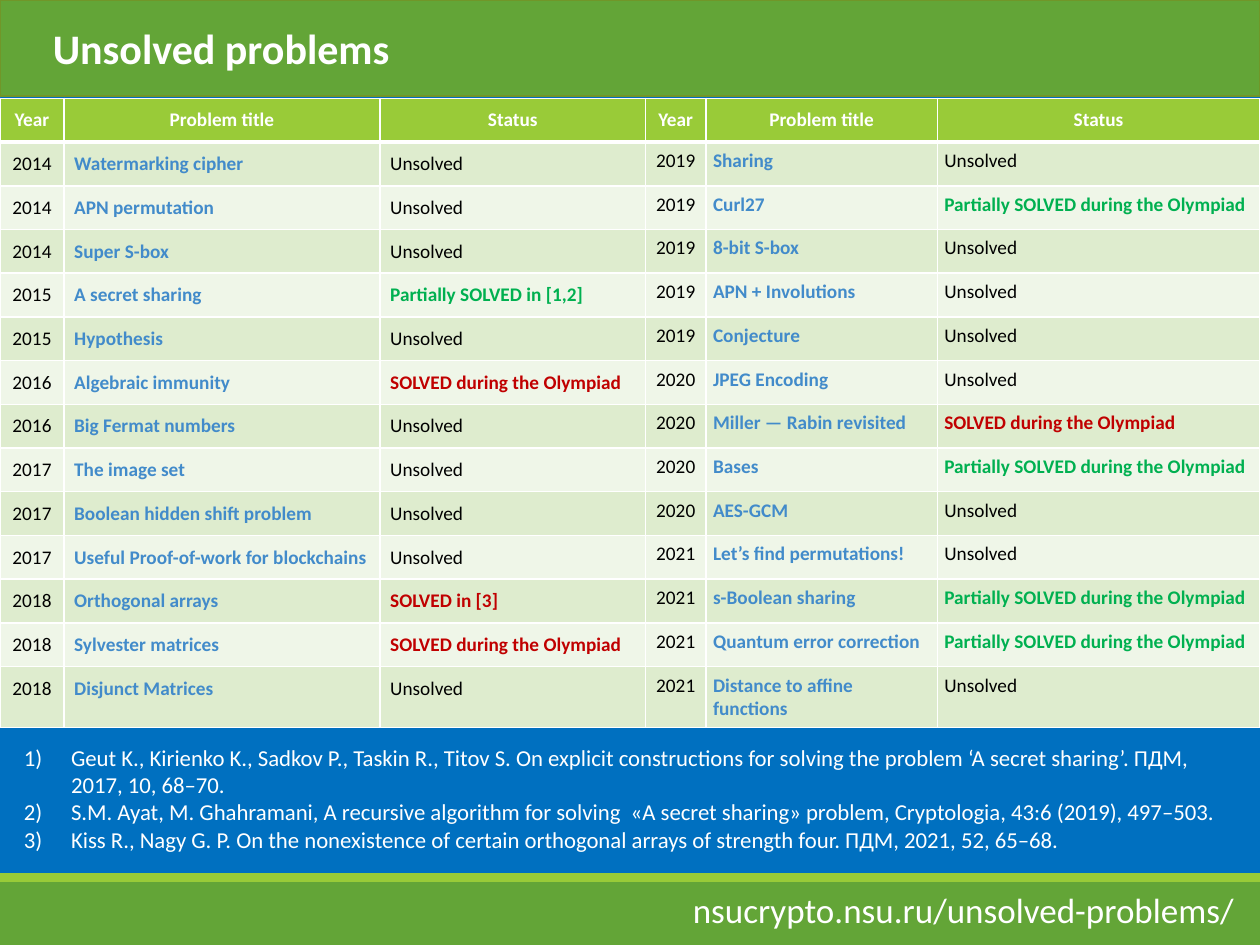
from dataclasses import dataclass
from typing import Any, NamedTuple

from lxml import etree
from pptx import Presentation
from pptx import util as u
from pptx.dml import color
from pptx.enum import shapes, text
from pptx.oxml import ns

Pt = u.Pt
RGB = color.RGBColor

WHITE = RGB(0xFF, 0xFF, 0xFF)
BLACK = RGB(0x00, 0x00, 0x00)
BLUE = RGB(0x00, 0x70, 0xC0)
GREEN = RGB(0x63, 0xA5, 0x37)
OLIVE = RGB(0x71, 0x96, 0x29)
LIME = RGB(0x99, 0xCB, 0x38)
PALE = RGB(0xDE, 0xEC, 0xCE)
MIST = RGB(0xEF, 0xF6, 0xE8)
SKY = RGB(0x42, 0x8B, 0xCA)
LEAF = RGB(0x00, 0xB0, 0x50)
RED = RGB(0xC0, 0x00, 0x00)

FONT = "Calibri"
LEFT = text.PP_ALIGN.LEFT
MID = text.PP_ALIGN.CENTER
OPEN = "Unsolved"
DONE = "SOLVED during the Olympiad"
PART = "Partially SOLVED during the Olympiad"

HEAD = ("Year", "Problem title", "Status")
WIDTHS = (36.6, 180.6, 151.7, 34.6, 132.2, 184.3)
ROW = 25
LAST = 34.8
INSETS = (5.8, 4)


@dataclass
class Band:
    top: float
    height: float
    fill: RGB
    edge: RGB | None = None


class Task(NamedTuple):
    year: int
    title: str
    status: str = OPEN


BANDS = (
    Band(504, 36, GREEN),
    Band(499, 5, LIME),
    Band(0, 54.7, GREEN, OLIVE),
)

EARLY = (
    Task(2014, "Watermarking cipher"),
    Task(2014, "APN permutation"),
    Task(2014, "Super S-box"),
    Task(2015, "A secret sharing", "Partially SOLVED in [1,2]"),
    Task(2015, "Hypothesis"),
    Task(2016, "Algebraic immunity", DONE),
    Task(2016, "Big Fermat numbers"),
    Task(2017, "The image set"),
    Task(2017, "Boolean hidden shift problem"),
    Task(2017, "Useful Proof-of-work for blockchains"),
    Task(2018, "Orthogonal arrays", "SOLVED in [3]"),
    Task(2018, "Sylvester matrices", DONE),
    Task(2018, "Disjunct Matrices"),
)

LATE = (
    Task(2019, "Sharing"),
    Task(2019, "Curl27", PART),
    Task(2019, "8-bit S-box"),
    Task(2019, "APN + Involutions"),
    Task(2019, "Conjecture"),
    Task(2020, "JPEG Encoding"),
    Task(2020, "Miller — Rabin revisited", DONE),
    Task(2020, "Bases", PART),
    Task(2020, "AES-GCM"),
    Task(2021, "Let’s find permutations!"),
    Task(2021, "s-Boolean sharing", PART),
    Task(2021, "Quantum error correction", PART),
    Task(2021, "Distance to affine functions"),
)

NOTES = (
    "Geut K., Kirienko K., Sadkov P., Taskin R., Titov S. On explicit constructions for solving "
    "the problem ‘A secret sharing’. ПДМ, 2017, 10, 68–70.",
    "S.M. Ayat, M. Ghahramani, A recursive algorithm for solving  «A secret sharing» problem, "
    "Cryptologia, 43:6 (2019), 497–503.",
    "Kiss R., Nagy G. P. On the nonexistence of certain orthogonal arrays of strength four. "
    "ПДМ, 2021, 52, 65–68.",
)


def apply(item: Any, values: dict[str, Any]) -> None:
    for name, value in values.items():
        setattr(item, name, value)


def place(item: Any, left: float, top: float, width: float, height: float) -> None:
    box = {"left": left, "top": top, "width": width, "height": height}
    apply(item, {name: Pt(value) for name, value in box.items()})


def write(para: Any, words: str, size: float, ink: RGB = WHITE,
          bold: bool = False, align: Any = LEFT) -> None:
    para.alignment = align
    run = para.add_run()
    run.text = words
    apply(run.font, {"name": FONT, "size": Pt(size), "bold": bold})
    run.font.color.rgb = ink


def draw_band(page: Any, band: Band) -> None:
    shape = page.shapes.add_shape(
        shapes.MSO_SHAPE.RECTANGLE, Pt(0), Pt(band.top), Pt(720), Pt(band.height))
    shape.shadow.inherit = False
    shape.fill.solid()
    shape.fill.fore_color.rgb = band.fill
    if band.edge is None:
        shape.line.fill.background()
    else:
        shape.line.color.rgb = band.edge
        shape.line.width = Pt(1.25)


def add_box(page: Any, left: float, top: float, width: float, height: float) -> Any:
    frame = page.shapes.add_textbox(Pt(left), Pt(top), Pt(width), Pt(height)).text_frame
    frame.word_wrap = True
    return frame


def add_title(page: Any, words: str) -> None:
    title = page.shapes.title
    page.shapes._spTree.append(title._element)
    place(title, 23, 9.4, 720 - 23, 36)
    frame = title.text_frame
    apply(frame, {"vertical_anchor": text.MSO_ANCHOR.MIDDLE,
                  "auto_size": text.MSO_AUTO_SIZE.NONE})
    write(frame.paragraphs[0], words, 24, bold=True)


def edge_cell(cell: Any, base: float) -> None:
    props = cell._tc.get_or_add_tcPr()
    for spot, side in enumerate("LRTB"):
        width = base if side == "B" else 1
        line = etree.Element(ns.qn(f"a:ln{side}"), w=str(int(Pt(width))))
        fill = etree.SubElement(line, ns.qn("a:solidFill"))
        etree.SubElement(fill, ns.qn("a:srgbClr"), val=str(WHITE))
        props.insert(spot, line)


def fill_cell(cell: Any, words: str, fill: RGB, ink: RGB, bold: bool,
              align: Any, inset: float, base: float = 1) -> None:
    sides = ("margin_left", "margin_right", "margin_top", "margin_bottom")
    apply(cell, dict.fromkeys(sides, Pt(inset)))
    cell.fill.solid()
    cell.fill.fore_color.rgb = fill
    write(cell.text_frame.paragraphs[0], words, 11, ink, bold, align)
    edge_cell(cell, base)


def tint(status: str) -> RGB:
    if status == OPEN:
        return BLACK
    return LEAF if status.startswith("Partially") else RED


def add_grid(page: Any) -> None:
    count = len(EARLY) + 1
    high = ROW * (count - 1) + LAST
    grid = page.shapes.add_table(
        count, len(WIDTHS), Pt(0), Pt(56.2), Pt(720), Pt(high)).table
    grid.horz_banding = False
    for col, width in zip(grid.columns, WIDTHS):
        col.width = Pt(width)
    for num, row in enumerate(grid.rows):
        row.height = Pt(LAST if num == count - 1 else ROW)
    for col, words in enumerate(HEAD * 2):
        cell = grid.cell(0, col)
        fill_cell(cell, words, LIME, WHITE, True, MID, INSETS[0], 3)
        cell.vertical_anchor = text.MSO_ANCHOR.BOTTOM
    for half, (tasks, inset) in enumerate(zip((EARLY, LATE), INSETS)):
        for row, task in enumerate(tasks, 1):
            fill = PALE if row % 2 else MIST
            inks = (BLACK, SKY, tint(task.status))
            for col, (value, ink) in enumerate(zip(task, inks)):
                fill_cell(grid.cell(row, half * len(HEAD) + col), str(value), fill, ink,
                          ink != BLACK, LEFT if col else MID, inset)


def add_notes(page: Any) -> None:
    frame = add_box(page, 6.5, 421.2, 707, 70.6)
    for num, words in enumerate(NOTES):
        para = frame.add_paragraph() if num else frame.paragraphs[0]
        props = para._p.get_or_add_pPr()
        props.set("marL", str(int(Pt(27))))
        props.set("indent", str(int(Pt(-27))))
        etree.SubElement(props, ns.qn("a:buFont"), typeface="+mj-lt")
        etree.SubElement(props, ns.qn("a:buAutoNum"), type="arabicParenR")
        write(para, words, 13)


def main() -> None:
    deck = Presentation()
    apply(deck, {"slide_width": Pt(720), "slide_height": Pt(540)})
    page = deck.slides.add_slide(deck.slide_layouts[5])
    page.background.fill.solid()
    page.background.fill.fore_color.rgb = BLUE
    for band in BANDS:
        draw_band(page, band)
    add_title(page, "Unsolved problems")
    link = add_box(page, 388.8, 504, 501, 31.5)
    write(link.paragraphs[0], "nsucrypto.nsu.ru/unsolved-problems/", 20)
    add_grid(page)
    add_notes(page)
    deck.save("out.pptx")


if __name__ == "__main__":
    main()
